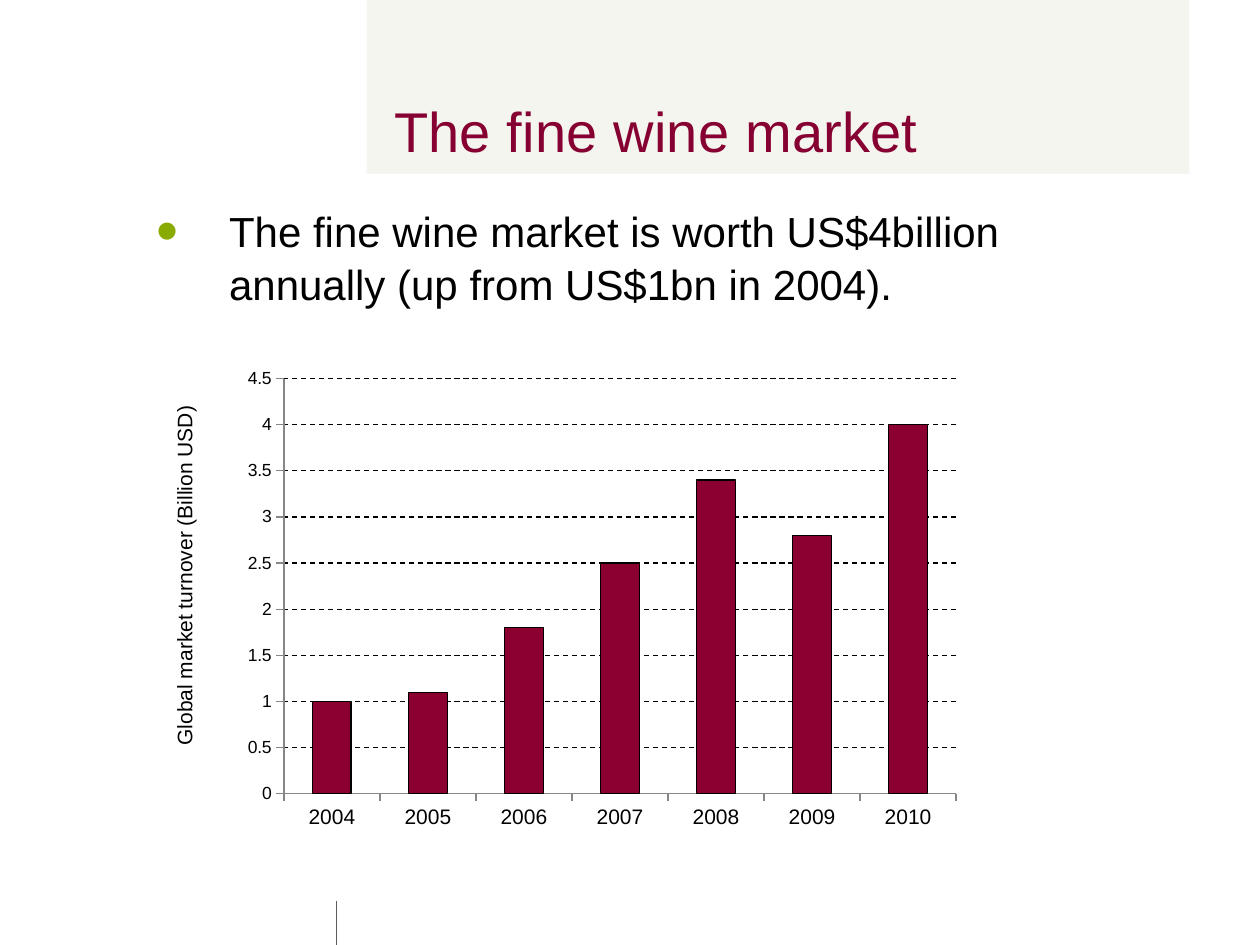
from dataclasses import dataclass

from lxml.etree import SubElement
from pptx import Presentation
from pptx.chart.data import CategoryChartData
from pptx.dml.color import RGBColor
from pptx.enum.chart import XL_CHART_TYPE, XL_TICK_MARK
from pptx.enum.dml import MSO_LINE
from pptx.enum.shapes import MSO_CONNECTOR, MSO_SHAPE
from pptx.oxml import parse_xml
from pptx.oxml.ns import nsdecls, qn
from pptx.util import Inches, Pt


@dataclass(frozen=True)
class Theme:
    """Colours, font and type sizes."""
    font: str = "Arial"
    ink: str = "000000"
    wine: str = "860031"
    bar: str = "8B0031"
    dot: str = "89AA00"
    band: str = "F5F5EF"
    rule: str = "5C5B5D"
    axis: str = "868686"
    head: int = 32
    body: int = 24
    label: int = 12
    tick: int = 10
    thin: float = 0.75


def rgb(code):
    """Turn a hex code into a colour."""
    return RGBColor.from_string(code)


def style(font, size, color, name):
    """Set a font's face, size and colour."""
    font.name, font.size, font.bold = name, Pt(size), False
    font.color.rgb = rgb(color)


def stroke(line, color, width, dash=None):
    """Set a line's colour, width and dash."""
    line.color.rgb, line.width = rgb(color), Pt(width)
    if dash:
        line.dash_style = dash


def write(frame, text, *, size, color, name, track=0, bullet=None, indent=0, space=None):
    """Write one formatted paragraph into a text frame."""
    para = frame.paragraphs[0]
    props = para._p.get_or_add_pPr()
    if space:
        para.line_spacing = space
    if bullet:
        props.set("marL", str(Inches(indent)))
        props.set("indent", str(-Inches(indent)))
        tint = SubElement(props, qn("a:buClr"))
        SubElement(tint, qn("a:srgbClr"), val=bullet)
        SubElement(props, qn("a:buSzPct"), val="150000")
        SubElement(props, qn("a:buFont"), typeface=name)
        SubElement(props, qn("a:buChar"), char="•")
    run = para.add_run()
    run.text = text
    style(run.font, size, color, name)
    if track:
        run._r.get_or_add_rPr().set("spc", str(round(track * 100)))


def place(node, index, inner=False, **share):
    """Give a chart part a manual layout in shares of the chart."""
    for old in node.findall(qn("c:layout")):
        node.remove(old)
    target = '<c:layoutTarget val="inner"/>' if inner else ""
    modes = "".join(f'<c:{key}Mode val="edge"/>' for key in "xy")
    sizes = "".join(f'<c:{key} val="{val}"/>' for key, val in share.items())
    node.insert(index, parse_xml(
        f'<c:layout {nsdecls("c")}><c:manualLayout>{target}{modes}{sizes}'
        "</c:manualLayout></c:layout>"))


class Deck:
    """Hold the theme and the current slide on a 100 by 75 grid."""

    def __init__(self, theme):
        """Open a deck with one blank slide."""
        self.theme = theme
        self.show = Presentation()
        self.show.slide_width, self.show.slide_height = Inches(10), Inches(7.5)
        self.slide = self.show.slides.add_slide(self.show.slide_layouts[6])
        self.shapes = self.slide.shapes

    def grid(self, *cells):
        """Turn column and row pairs into lengths."""
        units = self.show.slide_width / 100, self.show.slide_height / 75
        return [round(cell * units[i % 2]) for i, cell in enumerate(cells)]

    def block(self, *cells, fill):
        """Draw a plain filled rectangle."""
        shape = self.shapes.add_shape(MSO_SHAPE.RECTANGLE, *self.grid(*cells))
        shape.shadow.inherit = False
        shape.fill.solid()
        shape.fill.fore_color.rgb = rgb(fill)
        shape.line.fill.background()

    def line(self, *cells, color):
        """Draw a straight line."""
        link = self.shapes.add_connector(MSO_CONNECTOR.STRAIGHT, *self.grid(*cells))
        stroke(link.line, color, self.theme.thin)
        SubElement(link._element.spPr, qn("a:effectLst"))

    def text(self, *cells, words, inset, **form):
        """Add a wrapped text box."""
        frame = self.shapes.add_textbox(*self.grid(*cells)).text_frame
        frame.word_wrap = True
        frame.margin_top = Inches(inset)
        write(frame, words, name=self.theme.font, **form)

    def chart(self, *cells, cats, vals, title):
        """Add the column chart."""
        look = self.theme
        data = CategoryChartData()
        data.categories = cats
        data.add_series("Series 1", vals)
        chart = self.shapes.add_chart(
            XL_CHART_TYPE.COLUMN_CLUSTERED, *self.grid(*cells), data).chart
        chart.has_legend = chart.has_title = False
        style(chart.font, look.tick, look.ink, look.font)
        area = chart.element.find(".//" + qn("c:plotArea"))
        place(area, 0, inner=True, x=0.176, y=0.051, w=0.787, h=0.863)

        plot = chart.plots[0]
        plot.gap_width, plot.vary_by_categories = 150, False
        bars = plot.series[0].format
        bars.fill.solid()
        bars.fill.fore_color.rgb = rgb(look.bar)
        stroke(bars.line, look.ink, look.thin)

        across, up = chart.category_axis, chart.value_axis
        for axis, size in ((across, look.label), (up, look.tick)):
            axis.major_tick_mark = XL_TICK_MARK.OUTSIDE
            axis.minor_tick_mark = XL_TICK_MARK.NONE
            stroke(axis.format.line, look.axis, look.thin)
            style(axis.tick_labels.font, size, look.ink, look.font)
        up.minimum_scale, up.maximum_scale, up.major_unit = 0, 4.5, 0.5
        up.tick_labels.number_format = "General"
        up.tick_labels.number_format_is_linked = False
        up.has_major_gridlines = True
        stroke(up.major_gridlines.format.line, look.ink, look.thin, MSO_LINE.DASH)
        up.has_title = True
        write(up.axis_title.text_frame, title, size=look.label,
              color=look.ink, name=look.font)
        node = up.axis_title.element
        node.find(".//" + qn("a:bodyPr")).set("rot", "-5400000")
        place(node, 1, x=0.04, y=0.1)


def main():
    """Build and save the slide."""
    look = Theme()
    deck = Deck(look)
    deck.block(29.1, 0, 65.3, 13.8, fill=look.band)
    deck.line(26.7, 71.5, 26.7, 75, color=look.rule)
    deck.text(30.3, 6.7, 58, 9.6, words="The fine wine market", inset=0.1,
              size=look.head, color=look.wine, track=0.1)
    deck.text(11.4, 11.5, 78, 25.2, inset=0.46, size=look.body, color=look.ink,
              words="The fine wine market is worth US$4billion annually "
                    "(up from US$1bn in 2004).",
              bullet=look.dot, indent=0.58, space=1.05)
    deck.chart(10.6, 28.1, 67.8, 38.2, cats=[str(year) for year in range(2004, 2011)],
               vals=[1, 1.1, 1.8, 2.5, 3.4, 2.8, 4],
               title="Global market turnover (Billion USD)")
    deck.show.save("out.pptx")


if __name__ == "__main__":
    main()
